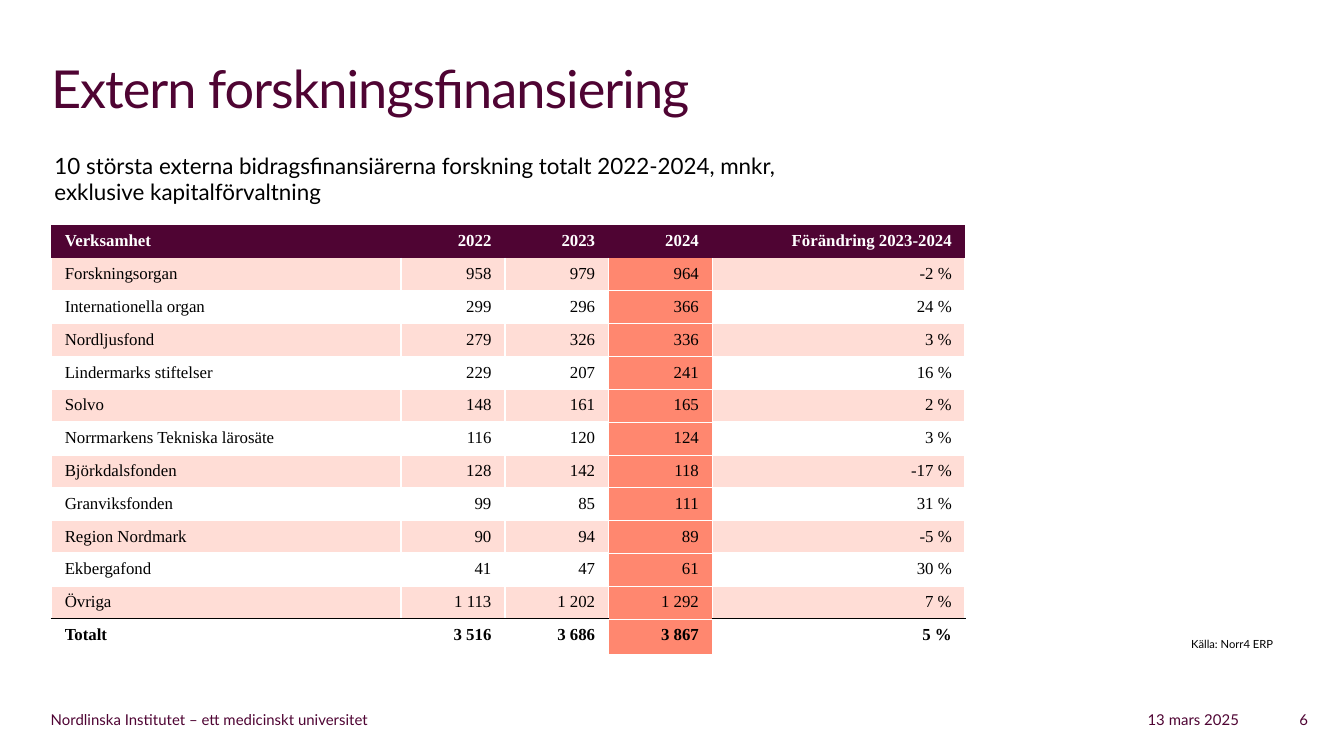
from lxml import etree
from pptx import Presentation
from pptx.dml.color import RGBColor
from pptx.enum.text import MSO_ANCHOR, PP_ALIGN
from pptx.oxml.ns import qn
from pptx.util import Cm, Pt

LEFT, RIGHT = PP_ALIGN.LEFT, PP_ALIGN.RIGHT
TOP = MSO_ANCHOR.TOP

THEME = {
    "plum": "4F0433", "coral": "FF876F", "blush": "FFDDD6",
    "white": "FFFFFF", "black": "000000",
    "sans": "Lato", "serif": "Times New Roman",
    "title": 28, "subtitle": 12, "table": 9, "footer": 8, "source": 6,
}

TITLE = "Extern forskningsfinansiering"
TITLE_BOX = (0.71, 0.94, 23.98, 2.39)

TEXTS = [
    ("10 största externa bidragsfinansiärerna forskning totalt 2022-2024, mnkr, \v"
     "exklusive kapitalförvaltning", (0.78, 2.74, 15.6, 1.27), "subtitle", "black", LEFT),
    ("Källa: Norr4 ERP", (20.75, 11.91, 3.56, 0.64), "source", "black", RIGHT),
    ("Nordlinska Institutet – ett medicinskt universitet",
     (0.71, 13.3, 7.8, 0.48), "footer", "plum", LEFT),
    ("13 mars 2025", (18.39, 13.3, 5.28, 0.48), "footer", "plum", RIGHT),
    ("6", (23.06, 13.3, 1.91, 0.48), "footer", "plum", RIGHT),
]

ROWS = [
    ("Verksamhet", "2022", "2023", "2024", "Förändring 2023-2024"),
    ("Forskningsorgan", "958", "979", "964", "-2 %"),
    ("Internationella organ", "299", "296", "366", "24 %"),
    ("Nordljusfond", "279", "326", "336", "3 %"),
    ("Lindermarks stiftelser", "229", "207", "241", "16 %"),
    ("Solvo", "148", "161", "165", "2 %"),
    ("Norrmarkens Tekniska lärosäte", "116", "120", "124", "3 %"),
    ("Björkdalsfonden", "128", "142", "118", "-17 %"),
    ("Granviksfonden", "99", "85", "111", "31 %"),
    ("Region Nordmark", "90", "94", "89", "-5 %"),
    ("Ekbergafond", "41", "47", "61", "30 %"),
    ("Övriga", "1 113", "1 202", "1 292", "7 %"),
    ("Totalt", "3 516", "3 686", "3 867", "5 %"),
]
TABLE_AT = (0.97, 4.25)
COL_WIDTHS = (6.61, 1.96, 1.96, 1.96, 4.78)
ROW_HEIGHT, TOTAL_HEIGHT = 0.62, 0.66
FOCUS_COL = 3
TOTAL_ROW = len(ROWS) - 1
PLAIN_STYLE = "{2D5ABB26-0587-4C30-8999-92F81FD0307C}"


def rgb(name):
    return RGBColor.from_string(THEME[name])


def style(p, size, color, face="sans", align=LEFT, bold=False):
    p.alignment = align
    f = p.font
    f.name, f.size, f.bold = THEME[face], Pt(THEME[size]), bold
    f.color.rgb = rgb(color)


def cell_borders(row, col):
    focus = col == FOCUS_COL
    thin_left = col in (FOCUS_COL, FOCUS_COL + 1)
    thin_right = col in (FOCUS_COL - 1, FOCUS_COL)
    plain = ("white", 0.25 if focus else 1)
    rule = plain if focus else ("black", 0.5)
    if row == 0:
        return {}
    if row == TOTAL_ROW:
        return {"T": rule}
    sides = {
        "L": ("white", 0.25 if thin_left else 1),
        "R": ("white", 0.25 if thin_right else 1),
    }
    if row > 1:
        sides["T"] = plain
    sides["B"] = rule if row == TOTAL_ROW - 1 else plain
    return sides


def draw_borders(cell, sides):
    tc_pr = cell._tc.get_or_add_tcPr()
    for i, (side, (color, width)) in enumerate(sides.items()):
        ln = etree.Element(qn("a:ln" + side), w=str(Pt(width)))
        fill = etree.SubElement(ln, qn("a:solidFill"))
        etree.SubElement(fill, qn("a:srgbClr"), val=THEME[color])
        tc_pr.insert(i, ln)


def cell_fill(row, col):
    if row == 0:
        return "plum"
    if col == FOCUS_COL:
        return "coral"
    return "blush" if row % 2 and row != TOTAL_ROW else "white"


def add_title(s):
    sp = s.shapes.title
    sp.left, sp.top, sp.width, sp.height = map(Cm, TITLE_BOX)
    tf = sp.text_frame
    tf.text = TITLE
    tf.vertical_anchor = TOP
    p = tf.paragraphs[0]
    style(p, "title", "plum")
    p.runs[0].font._element.set("spc", "-50")


def add_text(s, text, box, size, color, align):
    tf = s.shapes.add_textbox(*map(Cm, box)).text_frame
    tf.word_wrap = True
    p = tf.paragraphs[0]
    p.text = text
    style(p, size, color, align=align)


def add_funding_table(s):
    height = ROW_HEIGHT * TOTAL_ROW + TOTAL_HEIGHT
    box = (*TABLE_AT, sum(COL_WIDTHS), height)
    table = s.shapes.add_table(len(ROWS), len(COL_WIDTHS), *map(Cm, box)).table
    table.first_row = table.horz_banding = False
    table._tbl.tblPr.find(qn("a:tableStyleId")).text = PLAIN_STYLE
    for column, width in zip(table.columns, COL_WIDTHS):
        column.width = Cm(width)
    for r, values in enumerate(ROWS):
        table.rows[r].height = Cm(TOTAL_HEIGHT if r == TOTAL_ROW else ROW_HEIGHT)
        for c, value in enumerate(values):
            cell = table.cell(r, c)
            cell.text = value
            style(cell.text_frame.paragraphs[0], "table", "black" if r else "white",
                  "serif", RIGHT if c else LEFT, r in (0, TOTAL_ROW))
            cell.fill.solid()
            cell.fill.fore_color.rgb = rgb(cell_fill(r, c))
            draw_borders(cell, cell_borders(r, c))


def main():
    prs = Presentation()
    prs.slide_width, prs.slide_height = Cm(25.4), Cm(14.28)
    s = prs.slides.add_slide(prs.slide_layouts[5])
    add_title(s)
    add_funding_table(s)
    for item in TEXTS:
        add_text(s, *item)
    prs.save("out.pptx")


if __name__ == "__main__":
    main()
